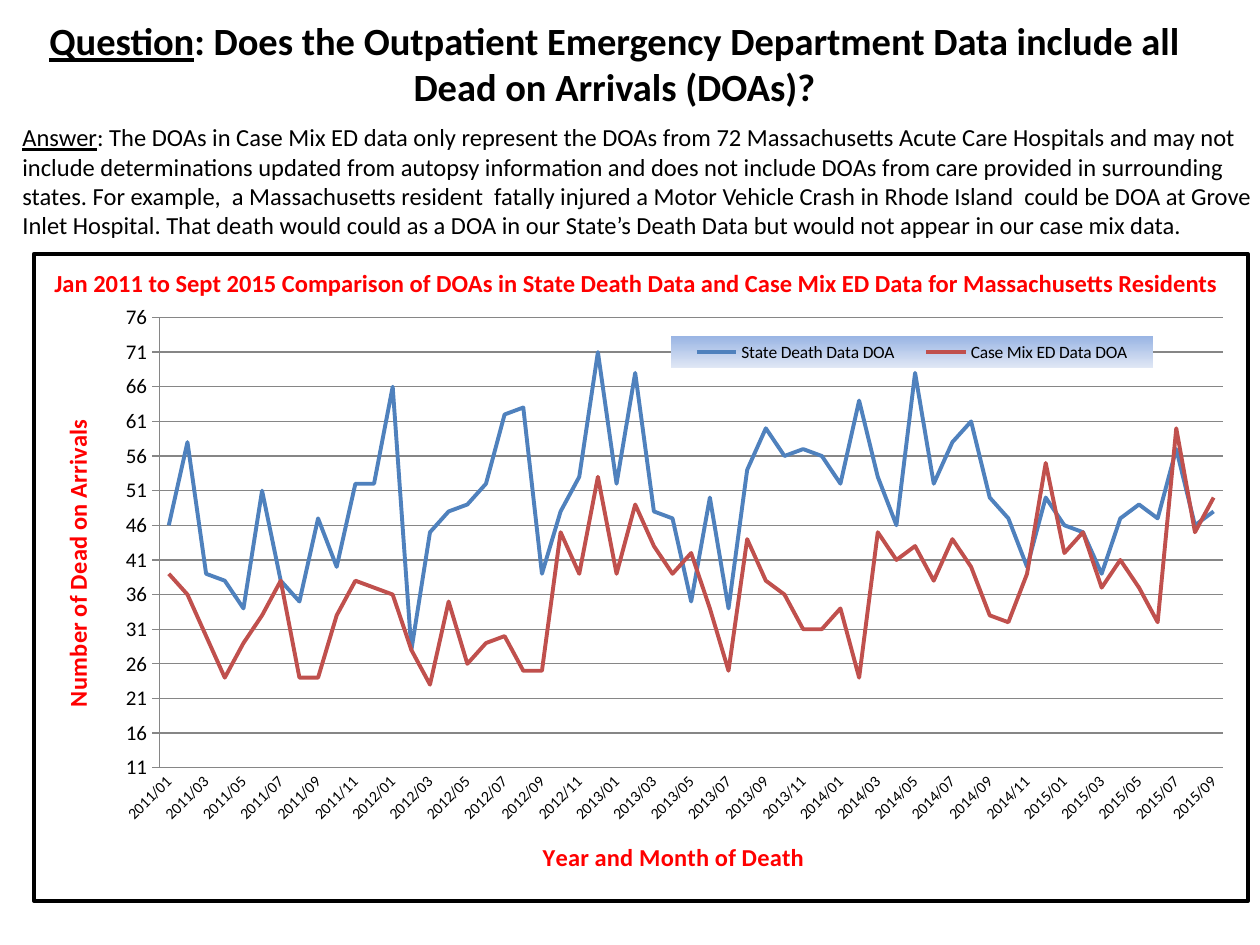
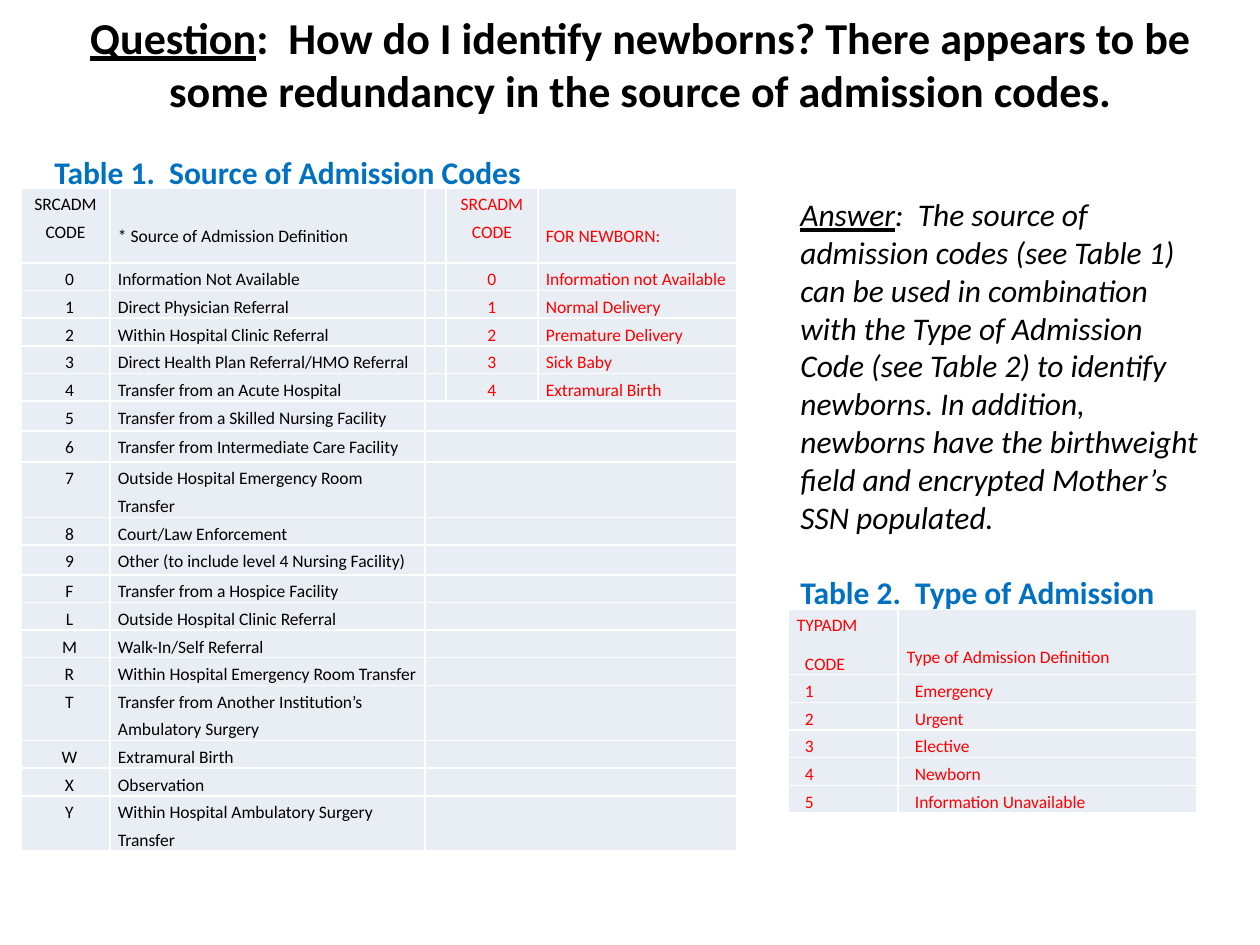
from dataclasses import dataclass

from lxml import etree
from pptx import Presentation
from pptx.chart.data import CategoryChartData
from pptx.dml.color import RGBColor
from pptx.enum.chart import XL_CHART_TYPE, XL_LEGEND_POSITION, XL_TICK_MARK
from pptx.enum.text import MSO_ANCHOR, MSO_AUTO_SIZE, PP_ALIGN
from pptx.oxml import parse_xml
from pptx.oxml.ns import nsdecls, qn
from pptx.util import Emu, Pt

PIXELS_PER_INCH = 126
SLIDE_WIDTH, SLIDE_HEIGHT = 1260, 945
TITLE_ONLY_LAYOUT = 5
FONT_NAME = "Calibri"

LEFT, CENTER = PP_ALIGN.LEFT, PP_ALIGN.CENTER
MIDDLE = MSO_ANCHOR.MIDDLE
NO_AUTOFIT = MSO_AUTO_SIZE.NONE
LINE_CHART = XL_CHART_TYPE.LINE
LEGEND_TOP = XL_LEGEND_POSITION.TOP
TICK_NONE, TICK_OUTSIDE = XL_TICK_MARK.NONE, XL_TICK_MARK.OUTSIDE

BLACK = RGBColor(0x00, 0x00, 0x00)
RED = RGBColor(0xFF, 0x00, 0x00)
CAPTION_BLUE = RGBColor(0x00, 0x70, 0xC0)
CELL_FILL = RGBColor(0xE9, 0xED, 0xF4)
GRID_GRAY = RGBColor(0x86, 0x86, 0x86)
STATE_BLUE = RGBColor(0x4F, 0x81, 0xBD)
CASE_MIX_RED = RGBColor(0xC0, 0x50, 0x4D)


@dataclass(frozen=True)
class Box:
    left: int
    top: int
    width: int
    height: int

    def emu(self) -> tuple[Emu, ...]:
        return tuple(px(value) for value in (self.left, self.top, self.width, self.height))


@dataclass(frozen=True)
class TextBlock:
    box: Box
    text: str
    format: dict
    color: RGBColor = BLACK
    lead: str = ""
    wrap: bool = True


@dataclass(frozen=True)
class CellText:
    lines: tuple[str, ...] = ()
    color: RGBColor = BLACK
    align: PP_ALIGN = LEFT
    indents: tuple[int, ...] = (0,)
    top_inset: int = 0


@dataclass(frozen=True)
class LineSeries:
    name: str
    color: RGBColor
    values: tuple[int, ...]


# Slide 1 content
DOA_TITLE = TextBlock(
    Box(0, 32, 1229, 63),
    ": Does the Outpatient Emergency Department Data include all Dead on Arrivals (DOAs)?",
    {"size": Pt(22), "bold": True}, lead="Question")
DOA_TEXTS = (
    TextBlock(Box(42, 262, 1197, 43),
              "Jan 2011 to Sept 2015 Comparison of DOAs in State Death Data and "
              "Case Mix ED Data for Massachusetts Residents",
              {"size": Pt(14), "bold": True}, RED, wrap=False),
    TextBlock(Box(10, 116, 1260, 131),
              ": The DOAs in Case Mix ED data only represent the DOAs from 72 Massachusetts "
              "Acute Care Hospitals and may not include determinations updated from autopsy "
              "information and does not include DOAs from care provided in surrounding states. "
              "For example,  a Massachusetts resident  fatally injured a Motor Vehicle Crash in "
              "Rhode Island  could be DOA at Grove Inlet Hospital. That death would could as a "
              "DOA in our State’s Death Data but would not appear in our case mix data.",
              {"size": Pt(14)}, lead="Answer"),
)
CHART_BOX = Box(32, 252, 1218, 651)
DOA_SERIES = (
    LineSeries("State Death Data DOA", STATE_BLUE, (
        46, 58, 39, 38, 34, 51, 38, 35, 47, 40, 52, 52, 66, 28, 45, 48, 49, 52, 62,
        63, 39, 48, 53, 71, 52, 68, 48, 47, 35, 50, 34, 54, 60, 56, 57, 56, 52, 64,
        53, 46, 68, 52, 58, 61, 50, 47, 40, 50, 46, 45, 39, 47, 49, 47, 57, 46, 48)),
    LineSeries("Case Mix ED Data DOA", CASE_MIX_RED, (
        39, 36, 30, 24, 29, 33, 38, 24, 24, 33, 38, 37, 36, 28, 23, 35, 26, 29, 30,
        25, 25, 45, 39, 53, 39, 49, 43, 39, 42, 34, 25, 44, 38, 36, 31, 31, 34, 24,
        45, 41, 43, 38, 44, 40, 33, 32, 39, 55, 42, 45, 37, 41, 37, 32, 60, 45, 50)),
)

# Slide 2 content
NEWBORN_TITLE = TextBlock(
    Box(42, 0, 1197, 126),
    ":  How do I identify newborns? There appears to be some redundancy "
    "in the source of admission codes.",
    {"size": Pt(25.2), "bold": True}, lead="Question")
CAPTION_FORMAT = {"size": Pt(18), "bold": True}
NEWBORN_TEXTS = (
    TextBlock(Box(42, 147, 503, 50), "Table 1.  Source of Admission Codes",
              CAPTION_FORMAT, CAPTION_BLUE, wrap=False),
    TextBlock(Box(788, 567, 389, 50), "Table 2.  Type of Admission",
              CAPTION_FORMAT, CAPTION_BLUE, wrap=False),
    TextBlock(Box(788, 189, 431, 357),
              ":  The source of admission codes (see Table 1) can be used in combination with "
              "the Type of Admission Code (see Table 2) to identify newborns. In addition, "
              "newborns have the birthweight field and encrypted Mother’s SSN populated.",
              {"size": Pt(18), "italic": True}, lead="Answer"),
)
SOURCE_CODES = "0123456789FLMRTWXY"
SOURCE_DEFINITIONS = (
    "Information Not Available", "Direct Physician Referral",
    "Within Hospital Clinic Referral", "Direct Health Plan Referral/HMO Referral",
    "Transfer from an Acute Hospital", "Transfer from a Skilled Nursing Facility",
    "Transfer from Intermediate Care Facility", "Outside Hospital Emergency Room Transfer",
    "Court/Law Enforcement", "Other (to include level 4 Nursing Facility)",
    "Transfer from a Hospice Facility", "Outside Hospital Clinic Referral",
    "Walk-In/Self Referral", "Within Hospital Emergency Room Transfer",
    "Transfer from Another Institution’s Ambulatory Surgery", "Extramural Birth",
    "Observation", "Within Hospital Ambulatory Surgery Transfer",
)
NEWBORN_SOURCES = ("Information not Available", "Normal Delivery", "Premature Delivery",
                   "Sick Baby", "Extramural Birth")
ADMISSION_TYPES = ("Emergency", "Urgent", "Elective", "Newborn", "Information Unavailable")
SOURCE_COLUMNS = (89, 315, 20, 92, 199)
TYPE_COLUMNS = (110, 299)
ROW_HEIGHT = 27
SOURCE_ROW_HEIGHTS = {0: 75, 6: 30, 7: 31, 8: 55, 10: 30, 15: 55, 18: 55}
CODE_INDENT = 8
HEADER_DROP = 32


def px(value: int) -> Emu:
    return Emu(round(value * 914400 / PIXELS_PER_INCH))


def apply_format(target, values: dict) -> None:
    for name, value in values.items():
        setattr(target, name, value)


def style_font(font, color: RGBColor, values: dict) -> None:
    apply_format(font, {"name": FONT_NAME, **values})
    font.color.rgb = color


def fill_text(text_frame, block: TextBlock) -> None:
    paragraph = text_frame.paragraphs[0]
    for text, underline in ((block.lead, True), (block.text, False)):
        if text:
            run = paragraph.add_run()
            run.text = text
            style_font(run.font, block.color, {**block.format, "underline": underline})


def add_text(slide, block: TextBlock) -> None:
    text_frame = slide.shapes.add_textbox(*block.box.emu()).text_frame
    text_frame.word_wrap = block.wrap
    fill_text(text_frame, block)


def add_titled_slide(presentation, block: TextBlock):
    slide = presentation.slides.add_slide(presentation.slide_layouts[TITLE_ONLY_LAYOUT])
    title = slide.shapes.title
    apply_format(title, dict(zip(("left", "top", "width", "height"), block.box.emu())))
    apply_format(title.text_frame, {"word_wrap": True, "auto_size": NO_AUTOFIT,
                                    "vertical_anchor": MIDDLE})
    fill_text(title.text_frame, block)
    title.text_frame.paragraphs[0].alignment = CENTER
    return slide


# Chart parts
def place_chart_part(element, index: int, area: Box, sized: bool = True) -> None:
    """Place a chart part at a slide position, as fractions of the chart frame."""
    for old_layout in element.findall(qn("c:layout")):
        element.remove(old_layout)
    layout = etree.Element(qn("c:layout"))
    manual = etree.SubElement(layout, qn("c:manualLayout"))
    settings = {"xMode": "edge", "yMode": "edge",
                "x": round((area.left - CHART_BOX.left) / CHART_BOX.width, 4),
                "y": round((area.top - CHART_BOX.top) / CHART_BOX.height, 4)}
    if sized:
        settings |= {"w": round(area.width / CHART_BOX.width, 4),
                     "h": round(area.height / CHART_BOX.height, 4)}
    if element.tag == qn("c:plotArea"):
        settings = {"layoutTarget": "inner", **settings}
    for name, value in settings.items():
        etree.SubElement(manual, qn(f"c:{name}")).set("val", str(value))
    element.insert(index, layout)


def style_axis(axis, title: str, title_area: Box, label_size: int, tick: XL_TICK_MARK) -> None:
    axis.major_tick_mark = tick
    axis.format.line.color.rgb = GRID_GRAY
    style_font(axis.tick_labels.font, BLACK, {"size": Pt(label_size)})
    text_frame = axis.axis_title.text_frame
    run = text_frame.paragraphs[0].add_run()
    run.text = title
    style_font(run.font, RED, {"size": Pt(14), "bold": True})
    place_chart_part(axis.axis_title._element, 1, title_area, sized=False)


def add_doa_chart(slide) -> None:
    data = CategoryChartData()
    months = len(DOA_SERIES[0].values)
    data.categories = [f"{2011 + month // 12}/{month % 12 + 1:02}" for month in range(months)]
    for series in DOA_SERIES:
        data.add_series(series.name, series.values)
    chart = slide.shapes.add_chart(LINE_CHART, *CHART_BOX.emu(), data).chart
    chart.has_title = False
    style_font(chart.font, BLACK, {"size": Pt(18)})
    for line, series in zip(chart.plots[0].series, DOA_SERIES):
        line.smooth = False
        line.format.line.width = Pt(2.25)
        line.format.line.color.rgb = series.color
    chart_element = chart._chartSpace.find(qn("c:chart"))
    chart_element.addnext(parse_xml(
        f'<c:spPr {nsdecls("c", "a")}><a:solidFill><a:srgbClr val="FFFFFF"/></a:solidFill>'
        '<a:ln w="28575"><a:solidFill><a:srgbClr val="000000"/></a:solidFill></a:ln></c:spPr>'))
    place_chart_part(chart_element.find(qn("c:plotArea")), 0, Box(158, 316, 1067, 453))

    # Axes
    months_axis, count_axis = chart.category_axis, chart.value_axis
    style_axis(months_axis, "Year and Month of Death", Box(538, 837, 0, 0), 9, TICK_NONE)
    style_axis(count_axis, "Number of Dead on Arrivals", Box(54, 415, 0, 0), 12, TICK_OUTSIDE)
    apply_format(count_axis, {"minimum_scale": 11, "maximum_scale": 76, "major_unit": 5,
                              "has_major_gridlines": True})
    count_axis.major_gridlines.format.line.color.rgb = GRID_GRAY
    label_body = months_axis._element.find(qn("c:txPr")).find(qn("a:bodyPr"))
    label_body.set("rot", "-2700000")
    count_axis.axis_title.text_frame._txBody.bodyPr.set("rot", "-5400000")
    label_skip = etree.Element(qn("c:tickLblSkip"))
    label_skip.set("val", "2")
    months_axis._element.find(qn("c:noMultiLvlLbl")).addprevious(label_skip)

    # Legend on a gradient band
    chart.has_legend = True
    apply_format(chart.legend, {"position": LEGEND_TOP, "include_in_layout": True})
    style_font(chart.legend.font, BLACK, {"size": Pt(10)})
    legend = chart.legend._element
    place_chart_part(legend, 1, Box(671, 335, 484, 32))
    legend.find(qn("c:overlay")).addnext(parse_xml(
        f'<c:spPr {nsdecls("c", "a")}><a:gradFill><a:gsLst>'
        '<a:gs pos="0"><a:srgbClr val="9AB5E4"/></a:gs>'
        '<a:gs pos="100000"><a:srgbClr val="E1E8F5"/></a:gs>'
        '</a:gsLst><a:lin ang="5400000" scaled="0"/></a:gradFill></c:spPr>'))


# Table parts
def format_cell(cell, content: CellText, inset: int) -> None:
    apply_format(cell, {"margin_left": px(inset), "margin_right": px(inset),
                        "margin_top": px(content.top_inset), "margin_bottom": 0})
    cell.fill.solid()
    cell.fill.fore_color.rgb = CELL_FILL
    for index, side in enumerate(("lnL", "lnR", "lnT", "lnB")):
        cell._tc.get_or_add_tcPr().insert(index, parse_xml(
            f'<a:{side} {nsdecls("a")} w="12700"><a:solidFill><a:srgbClr val="FFFFFF"/>'
            f'</a:solidFill></a:{side}>'))
    if not content.lines:
        end_format = etree.SubElement(cell.text_frame.paragraphs[0]._p, qn("a:endParaRPr"))
        end_format.set("sz", "1000")
    for index, (text, indent) in enumerate(zip(content.lines, content.indents)):
        paragraph = cell.text_frame.add_paragraph() if index else cell.text_frame.paragraphs[0]
        apply_format(paragraph, {"alignment": content.align, "line_spacing": 1.3,
                                 "space_before": Pt(3), "space_after": Pt(3)})
        paragraph._p.get_or_add_pPr().set("marL", str(px(indent)))
        run = paragraph.add_run()
        run.text = text
        style_font(run.font, content.color, {"size": Pt(10)})


def add_code_table(slide, left: int, top: int, columns: tuple[int, ...],
                   heights: dict[int, int], rows: list[list[CellText]], inset: int):
    row_heights = [heights.get(index, ROW_HEIGHT) for index in range(len(rows))]
    box = Box(left, top, sum(columns), sum(row_heights))
    table = slide.shapes.add_table(len(rows), len(columns), *box.emu()).table
    apply_format(table, {"first_row": False, "horz_banding": False})
    for column, width in zip(table.columns, columns):
        column.width = px(width)
    for row, height, contents in zip(table.rows, row_heights, rows):
        row.height = px(height)
        for cell, content in zip(row.cells, contents):
            format_cell(cell, content, inset)
    return table


def add_source_table(slide) -> None:
    rows = [[CellText(("SRCADM CODE",), align=CENTER),
             CellText(("* Source of Admission Definition",), top_inset=HEADER_DROP),
             CellText(), CellText(("SRCADM CODE",), RED, CENTER),
             CellText(("FOR NEWBORN:",), RED, top_inset=HEADER_DROP)]]
    for index, (code, definition) in enumerate(zip(SOURCE_CODES, SOURCE_DEFINITIONS)):
        row = [CellText((code,), align=CENTER, indents=(CODE_INDENT,)),
               CellText((definition,)), CellText(), CellText(), CellText()]
        if index < len(NEWBORN_SOURCES):
            row[3:] = [CellText((code,), RED, CENTER), CellText((NEWBORN_SOURCES[index],), RED)]
        rows.append(row)
    table = add_code_table(slide, 21, 188, SOURCE_COLUMNS, SOURCE_ROW_HEIGHTS, rows, 8)
    for index in range(len(NEWBORN_SOURCES) + 1, len(rows)):
        table.cell(index, 2).merge(table.cell(index, 4))


def add_type_table(slide) -> None:
    rows = [[CellText(("TYPADM", "CODE"), RED, indents=(0, CODE_INDENT)),
             CellText(("Type of Admission Definition",), RED, top_inset=HEADER_DROP)]]
    rows += [[CellText((text,), RED, indents=(CODE_INDENT,)) for text in (str(code), name)]
             for code, name in enumerate(ADMISSION_TYPES, 1)]
    add_code_table(slide, 788, 609, TYPE_COLUMNS, {0: 64}, rows, 9)


def main() -> None:
    presentation = Presentation()
    apply_format(presentation, {"slide_width": px(SLIDE_WIDTH), "slide_height": px(SLIDE_HEIGHT)})

    doa_slide = add_titled_slide(presentation, DOA_TITLE)
    add_doa_chart(doa_slide)
    for block in DOA_TEXTS:
        add_text(doa_slide, block)

    newborn_slide = add_titled_slide(presentation, NEWBORN_TITLE)
    add_type_table(newborn_slide)
    add_source_table(newborn_slide)
    for block in NEWBORN_TEXTS:
        add_text(newborn_slide, block)

    presentation.save("out.pptx")


if __name__ == "__main__":
    main()
